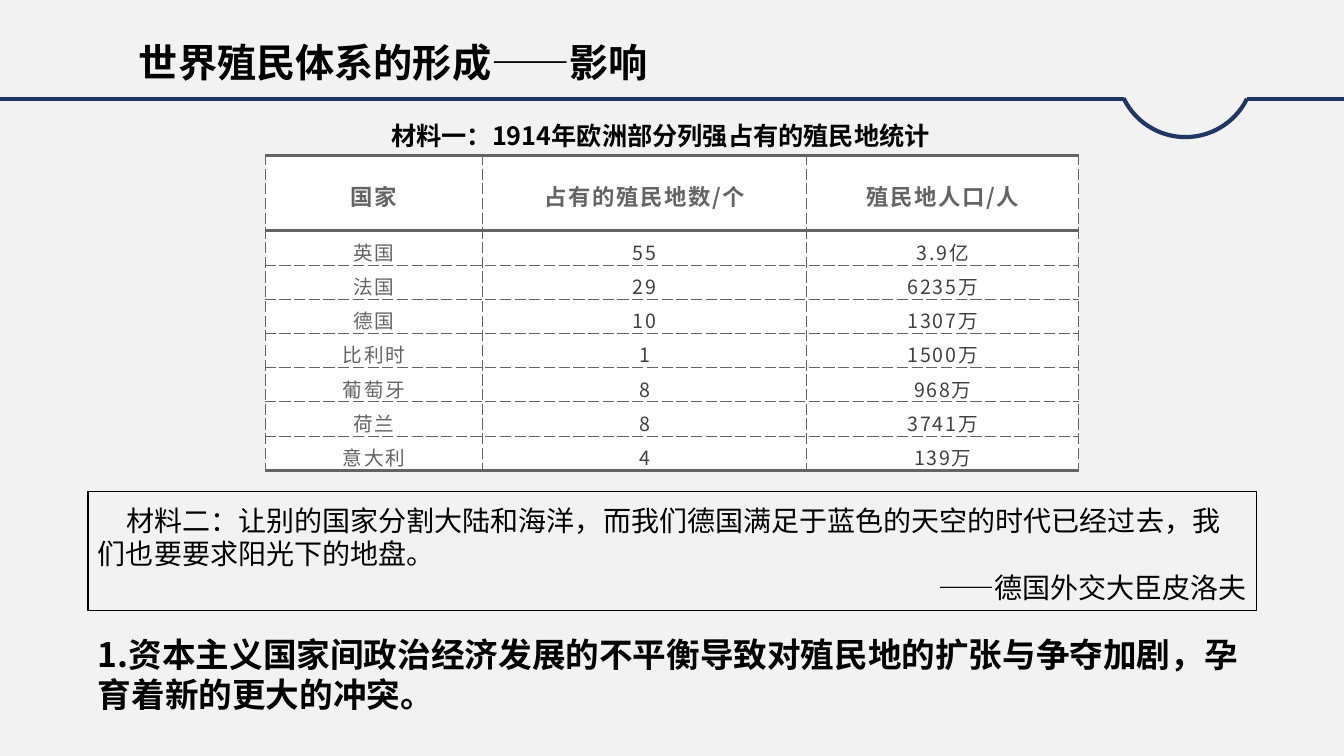
from lxml import etree
from pptx import Presentation
from pptx.dml.color import RGBColor
from pptx.enum.shapes import MSO_CONNECTOR, MSO_SHAPE
from pptx.enum.text import MSO_ANCHOR, PP_ALIGN
from pptx.oxml.ns import qn
from pptx.util import Inches, Pt

LEFT, CENTER, RIGHT = PP_ALIGN.LEFT, PP_ALIGN.CENTER, PP_ALIGN.RIGHT
MIDDLE, TOP = MSO_ANCHOR.MIDDLE, MSO_ANCHOR.TOP
RECT, ARC = MSO_SHAPE.RECTANGLE, MSO_SHAPE.ARC
STRAIGHT = MSO_CONNECTOR.STRAIGHT

PAPER = RGBColor(0xF2, 0xF2, 0xF2)
WHITE = RGBColor(0xFF, 0xFF, 0xFF)
BLACK = RGBColor(0, 0, 0)
NAVY = RGBColor(0x1F, 0x37, 0x62)
GRAY = RGBColor(0x64, 0x64, 0x64)
DARK = RGBColor(0x40, 0x40, 0x40)

FONT = "Noto Sans CJK SC"
WIDTH, HEIGHT = Inches(13.33), Inches(7.5)
MARGIN, CONTENT = 6.55, 86.95  # left edge and width of the text column
RULE_Y = 13.13

COLUMNS = [16.2, 24.1, 20.25]
HEADER_ROW, BODY_ROW = 10, 4.53
COLONIES = [
    ("国家", "占有的殖民地数/个", "殖民地人口/人"),
    ("英国", "55", "3.9亿"),
    ("法国", "29", "6235万"),
    ("德国", "10", "1307万"),
    ("比利时", "1", "1500万"),
    ("葡萄牙", "8", "968万"),
    ("荷兰", "8", "3741万"),
    ("意大利", "4", "139万"),
]


def across(share):
    """Percent of the slide's width."""
    return int(WIDTH * share / 100)


def down(share):
    """Percent of the slide's height."""
    return int(HEIGHT * share / 100)


def area(x, y, w, h):
    return across(x), down(y), across(w), down(h)


def style(p, size, color=BLACK, bold=False, align=LEFT, spacing=None):
    p.alignment = align
    p.font.name = FONT
    p.font.size = Pt(size)
    p.font.bold = bold
    p.font.color.rgb = color
    props = p._p.pPr.find(qn("a:defRPr"))
    etree.SubElement(props, qn("a:ea")).set("typeface", FONT)
    if spacing:
        props.set("spc", str(int(spacing * 100)))


def add_text(s, box, text, size, anchor=TOP):
    tf = s.shapes.add_textbox(*area(*box)).text_frame
    tf.word_wrap = True
    tf.vertical_anchor = anchor
    p = tf.paragraphs[0]
    p.text = text
    style(p, size, bold=True)
    return p


def add_rule(s, start, end):
    line = s.shapes.add_connector(
        STRAIGHT, across(start), down(RULE_Y), across(end), down(RULE_Y))
    line.line.color.rgb = NAVY
    line.line.width = Pt(3)
    etree.SubElement(line._element.spPr, qn("a:effectLst"))


def add_header_line(s):
    add_rule(s, 0, 83.62)
    add_rule(s, 92.78, 100)
    dip = s.shapes.add_shape(ARC, *area(83.1, 0, 10.2, 18.13))
    dip.shadow.inherit = False
    dip.adjustments[0], dip.adjustments[1] = 139.89, 0.77
    dip.rotation = 153
    dip.fill.background()
    dip.line.color.rgb = NAVY
    dip.line.width = Pt(3)


def add_border(cell, side, thick):
    ln = etree.SubElement(cell._tc.get_or_add_tcPr(), qn("a:ln" + side))
    ln.set("w", str(Pt(2.25 if thick else 0.75)))
    fill = etree.SubElement(ln, qn("a:solidFill"))
    etree.SubElement(fill, qn("a:srgbClr")).set("val", str(GRAY))
    etree.SubElement(ln, qn("a:prstDash")).set("val", "solid" if thick else "sysDash")


def fill_cell(cell, text, row, col):
    header = row == 0
    for side, thick in (("L", False), ("R", False), ("T", row <= 1),
                        ("B", row in (0, len(COLONIES) - 1))):
        add_border(cell, side, thick)
    cell.fill.solid()
    cell.fill.fore_color.rgb = WHITE
    cell.vertical_anchor = MIDDLE
    cell.margin_left = cell.margin_right = Inches(0.19)
    cell.margin_top = cell.margin_bottom = Inches(0.01)
    p = cell.text_frame.paragraphs[0]
    p.text = text
    p.line_spacing = 1.2
    style(p, 16 if header else 14, GRAY if header or col == 0 else DARK,
          header, CENTER, spacing=1.2)


def add_colony_table(s, x, y):
    body = BODY_ROW * (len(COLONIES) - 1)
    table = s.shapes.add_table(
        len(COLONIES), len(COLUMNS),
        *area(x, y, sum(COLUMNS), HEADER_ROW + body)).table
    table.first_row = table.horz_banding = False
    for column, share in zip(table.columns, COLUMNS):
        column.width = across(share)
    for row, values in enumerate(COLONIES):
        table.rows[row].height = down(BODY_ROW if row else HEADER_ROW)
        for col, text in enumerate(values):
            fill_cell(table.cell(row, col), text, row, col)


def add_quote(s, box, quote, speaker):
    sp = s.shapes.add_shape(RECT, *area(*box))
    sp.shadow.inherit = False
    sp.fill.background()
    sp.line.color.rgb = BLACK
    sp.line.width = Pt(0.75)
    tf = sp.text_frame
    tf.word_wrap = True
    tf.vertical_anchor = TOP
    tf.margin_top = Inches(0.11)
    p = tf.paragraphs[0]
    p.text = quote
    p._p.get_or_add_pPr().set("indent", str(Inches(0.28)))
    style(p, 20)
    p = tf.add_paragraph()
    p.text = speaker
    style(p, 20, align=RIGHT)


def main():
    prs = Presentation()
    prs.slide_width, prs.slide_height = WIDTH, HEIGHT
    s = prs.slides.add_slide(prs.slide_layouts[6])
    s.background.fill.solid()
    s.background.fill.fore_color.rgb = PAPER

    # Title band
    add_header_line(s)
    title = add_text(s, (9.6, 4.8, 90.4, 7.87), "世界殖民体系的形成——影响", 28, MIDDLE)
    title.line_spacing = 0.8

    # First source: colony statistics
    add_text(s, (28.38, 15.2, 43.28, 5.33),
             "材料一：1914年欧洲部分列强占有的殖民地统计", 18)
    add_colony_table(s, 19.72, 20.53)

    # Second source: quotation
    add_quote(s, (MARGIN, 65.07, CONTENT, 15.73),
              "材料二：让别的国家分割大陆和海洋，而我们德国满足于蓝色的天空的时代"
              "已经过去，我们也要要求阳光下的地盘。",
              "——德国外交大臣皮洛夫")

    # Conclusion
    add_text(s, (MARGIN, 83.2, CONTENT, 12.13),
             "1.资本主义国家间政治经济发展的不平衡导致对殖民地的扩张与争夺加剧，"
             "孕育着新的更大的冲突。", 24)

    prs.save("out.pptx")


if __name__ == "__main__":
    main()
